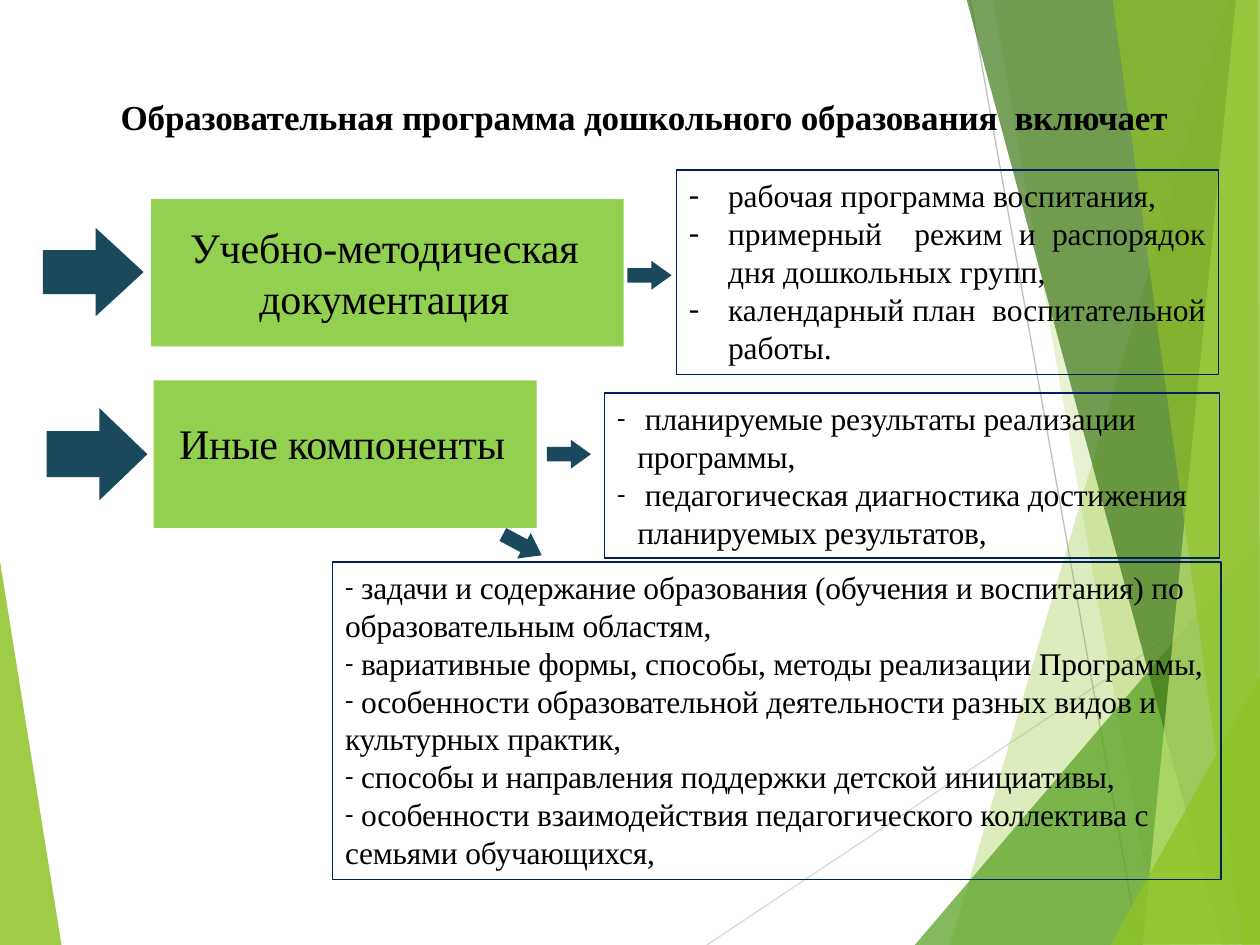
from lxml.etree import SubElement
from pptx import Presentation
from pptx.dml.color import RGBColor
from pptx.enum.shapes import MSO_CONNECTOR, MSO_SHAPE
from pptx.enum.text import MSO_ANCHOR, MSO_AUTO_SIZE, PP_ALIGN
from pptx.oxml.ns import qn
from pptx.util import Inches, Pt

FONT = "Times New Roman"
BLACK = RGBColor(0x00, 0x00, 0x00)
NAVY = RGBColor(0x00, 0x20, 0x60)
TEAL = RGBColor(0x1A, 0x49, 0x5D)
LIME = RGBColor(0x92, 0xD0, 0x50)
GREEN = RGBColor(0x90, 0xC2, 0x26)
LEAF = RGBColor(0x54, 0xA0, 0x21)
DARK = RGBColor(0x3F, 0x78, 0x19)
PALE = RGBColor(0xC0, 0xE4, 0x74)
SILVER = RGBColor(0xD9, 0xD9, 0xD9)
GRAY = RGBColor(0xBF, 0xBF, 0xBF)

RAYS = [
    (SILVER, (5.61, 7.5), (10.01, 4.57)),
    (GRAY, (7.7, 0), (9.04, 7.5)),
]
WEDGE = (GREEN, 85, [(-0.01, 4.39), (0.49, 7.51), (-0.01, 7.5)])
FACETS = [
    (GREEN, 30, [(9.75, 0), (7.54, 7.5), (10.02, 7.51), (10.01, 0.01)]),
    (GREEN, 20, [(7.88, -0.01), (9.19, 7.5), (10.01, 7.5), (10.01, -0.01)]),
    (LEAF, 72, [(7.26, 7.5), (10, 4.29), (10.01, 7.5)]),
    (DARK, 70, [(7.67, -0.01), (9.7, 7.5), (10.01, 7.49), (10.01, -0.01)]),
    (PALE, 70, [(9.81, -0.01), (9.07, 7.5), (10.01, 7.5), (10, -0.01)]),
    (GREEN, 65, [(8.83, -0.01), (9.86, 7.5), (10, 7.5), (9.98, -0.01)]),
    (GREEN, 80, [(8.81, 7.5), (10.01, 5.35), (10.01, 7.49)]),
]
PLANS = [
    "рабочая программа воспитания, ",
    "примерный  режим и распорядок дня дошкольных групп, ",
    "календарный план  воспитательной работы. ",
]
RESULTS = [
    " планируемые результаты реализации программы,",
    " педагогическая диагностика достижения планируемых результатов,",
]
TASKS = [
    " задачи и содержание образования (обучения и воспитания) по  образовательным областям,",
    " вариативные формы, способы, методы реализации Программы,",
    " особенности образовательной деятельности разных видов и  культурных практик,",
    " способы и направления поддержки детской инициативы,",
    " особенности взаимодействия педагогического коллектива с  семьями обучающихся,",
]


def place(box):
    """Turn a box in inches into lengths."""
    return [Inches(side) for side in box]


def paint(shape, color, alpha=100):
    """Fill a shape without line or shadow."""
    shape.shadow.inherit = False
    shape.line.fill.background()
    shape.fill.solid()
    shape.fill.fore_color.rgb = color
    if alpha < 100:
        tone = shape.fill._xPr.find(".//" + qn("a:srgbClr"))
        SubElement(tone, qn("a:alpha"), val=str(alpha * 1000))


def add_facet(slide, color, alpha, points):
    """Draw a translucent polygon."""
    first, *rest = [tuple(place(point)) for point in points]
    pen = slide.shapes.build_freeform(*first, scale=1.0)
    pen.add_line_segments(rest, close=True)
    paint(pen.convert_to_shape(), color, alpha)


def add_ray(slide, color, start, end):
    """Draw a thin straight line."""
    ray = slide.shapes.add_connector(
        MSO_CONNECTOR.STRAIGHT, *place(start), *place(end))
    ray.line.color.rgb = color
    ray.line.width = Pt(0.75)
    SubElement(ray._element.spPr, qn("a:effectLst"))


def add_block(slide, box):
    """Draw a plain green rectangle."""
    paint(slide.shapes.add_shape(MSO_SHAPE.RECTANGLE, *place(box)), LIME)


def add_arrow(slide, box, head, turn=0):
    """Draw a block arrow with a head of the given length."""
    arrow = slide.shapes.add_shape(MSO_SHAPE.RIGHT_ARROW, *place(box))
    arrow.adjustments[0] = 0.5
    arrow.adjustments[1] = head / box[3]
    arrow.rotation = turn
    paint(arrow, TEAL)


def write(frame, lines, size=18, bold=False, align=PP_ALIGN.LEFT, space=0,
          track=0, bullet=None, scale=100, left=0, indent=0):
    """Fill a text frame with formatted paragraphs."""
    frame.word_wrap = True
    frame.auto_size = MSO_AUTO_SIZE.SHAPE_TO_FIT_TEXT
    frame.vertical_anchor = MSO_ANCHOR.TOP
    for index, line in enumerate(lines):
        para = frame.add_paragraph() if index else frame.paragraphs[0]
        para.alignment = align
        para.space_before = Pt(space)
        props = para._p.get_or_add_pPr()
        props.set("marL", str(Inches(left)))
        props.set("indent", str(Inches(indent)))
        if bullet:
            SubElement(props, qn("a:buSzPct"), val=str(scale * 1000))
            SubElement(props, qn("a:buFont"), typeface=FONT)
            SubElement(props, qn("a:buChar"), char=bullet)
        run = para.add_run()
        run.text = line
        run.font.name = FONT
        run.font.size = Pt(size)
        run.font.bold = bold
        run.font.color.rgb = BLACK
        run._r.get_or_add_rPr().set("spc", str(track))


def add_label(slide, box, text, **style):
    """Place a centred label without side margins."""
    frame = slide.shapes.add_textbox(*place(box)).text_frame
    frame.margin_left = frame.margin_right = frame.margin_bottom = 0
    frame.margin_top = Inches(0.01)
    write(frame, [text], align=PP_ALIGN.CENTER, space=1, track=-10,
          left=0.01, **style)


def add_list(slide, box, lines, **style):
    """Place a dashed list in an outlined rectangle."""
    shape = slide.shapes.add_shape(MSO_SHAPE.RECTANGLE, *place(box))
    shape.shadow.inherit = False
    shape.fill.background()
    shape.line.color.rgb = NAVY
    shape.line.width = Pt(0.75)
    write(shape.text_frame, lines, bullet="-", **style)


def main():
    """Build the slide and save it."""
    deck = Presentation()
    deck.slide_width, deck.slide_height = Inches(10), Inches(7.5)
    slide = deck.slides.add_slide(deck.slide_layouts[6])

    add_facet(slide, *WEDGE)
    for ray in RAYS:
        add_ray(slide, *ray)
    for facet in FACETS:
        add_facet(slide, *facet)

    add_label(slide, (0.34, 0.75, 9.53, 0.35),
              "Образовательная программа дошкольного образования  включает",
              size=20, bold=True)
    add_block(slide, (1.2, 1.58, 3.75, 1.17))
    add_block(slide, (1.22, 3.02, 3.04, 1.17))
    add_arrow(slide, (0.34, 1.81, 0.8, 0.7), 0.38)
    add_arrow(slide, (0.37, 3.24, 0.8, 0.73), 0.38)
    add_label(slide, (1.39, 1.75, 3.31, 0.82),
              "Учебно-методическая документация", size=24)
    add_label(slide, (1.35, 3.3, 2.72, 0.42), "Иные компоненты", size=24)

    add_list(slide, (5.37, 1.35, 4.3, 1.62), PLANS,
             align=PP_ALIGN.JUSTIFY, left=0.31, indent=-0.31)
    add_list(slide, (4.8, 3.12, 4.88, 1.31), RESULTS,
             scale=80, left=0.16, indent=-0.16, track=-10)
    add_list(slide, (2.64, 4.46, 7.05, 2.52), TASKS, scale=80, track=-10)
    for x, y, turn in [(4.98, 2.07, 0), (4.34, 3.49, 0), (3.97, 4.21, 28.1)]:
        add_arrow(slide, (x, y, 0.35, 0.23), 0.16, turn)

    deck.save("out.pptx")


if __name__ == "__main__":
    main()
